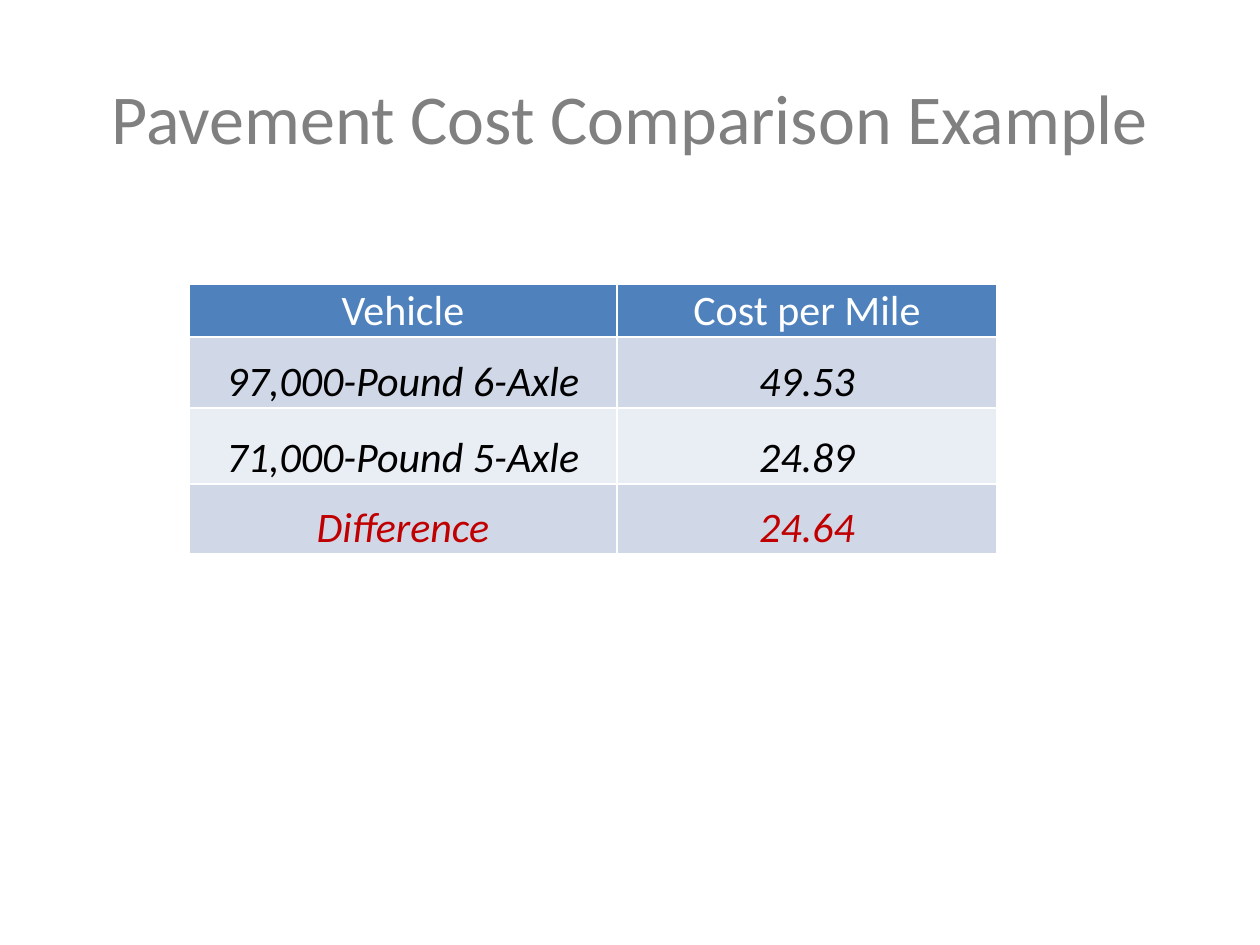
from pptx import Presentation
from pptx.dml.color import RGBColor
from pptx.enum.text import MSO_ANCHOR as Anchor, PP_ALIGN as Align
from pptx.util import Emu, Pt

SCALE = 914400 / 126
ROWS = [
    ("Vehicle", "Cost per Mile"),
    ("97,000-Pound 6-Axle", "49.53"),
    ("71,000-Pound 5-Axle", "24.89"),
    ("Difference", "24.64"),
]
# Fill, text colour, italic and height of each row
LOOKS = [
    ("4F81BD", "FFFFFF", False, 53),
    ("D0D8E8", "000000", True, 71),
    ("E9EDF4", "000000", True, 76),
    ("D0D8E8", "C00000", True, 70),
]
WIDTHS = [428, 380]


def px(n):
    return Emu(round(n * SCALE))


def tint(code):
    return RGBColor.from_string(code)


def apply(item, form):
    """Set each attribute of item named in form."""
    for name, value in form.items():
        setattr(item, name, value)


def write(frame, text, size, color, italic=False):
    para = frame.paragraphs[0]
    para.alignment = Align.CENTER
    run = para.add_run()
    run.text = text
    apply(run.font, {"name": "Calibri", "size": Pt(size),
                     "bold": False, "italic": italic})
    run.font.color.rgb = tint(color)


def add_title(slide, box, text):
    frame = slide.shapes.add_textbox(*map(px, box)).text_frame
    apply(frame, {"word_wrap": True, "vertical_anchor": Anchor.MIDDLE})
    write(frame, text, 40, "808080")


def add_costs(slide, box):
    frame = slide.shapes.add_table(len(ROWS), len(WIDTHS), *map(px, box))
    table = frame.table
    for col, width in zip(table.columns, WIDTHS):
        col.width = px(width)
    form = {"vertical_anchor": Anchor.BOTTOM, "margin_left": px(1),
            "margin_right": px(1), "margin_top": px(1), "margin_bottom": 0}
    for row, texts, look in zip(table.rows, ROWS, LOOKS):
        fill, color, italic, height = look
        row.height = px(height)
        for cell, text in zip(row.cells, texts):
            apply(cell, form)
            cell.fill.solid()
            cell.fill.fore_color.rgb = tint(fill)
            write(cell.text_frame, text, 24, color, italic)


def main():
    deck = Presentation()
    apply(deck, {"slide_width": px(1260), "slide_height": px(945)})
    slide = deck.slides.add_slide(deck.slide_layouts[6])
    add_title(slide, (63, 38, 1134, 158), "Pavement Cost Comparison Example")
    tall = sum(look[-1] for look in LOOKS)
    add_costs(slide, (189, 284, sum(WIDTHS), tall))
    deck.save("out.pptx")


if __name__ == "__main__":
    main()
